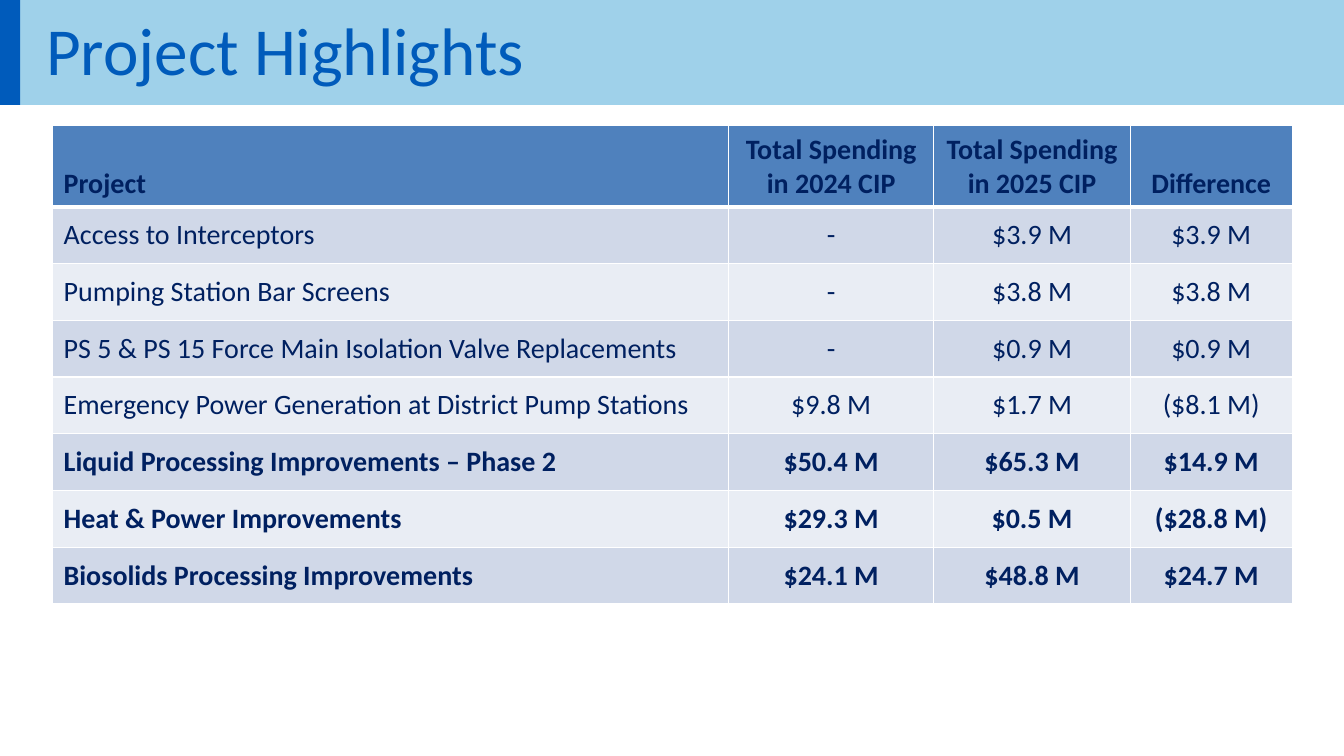
from dataclasses import dataclass

from pptx import Presentation
from pptx.dml.color import RGBColor as RGB
from pptx.enum.shapes import MSO_SHAPE as SHAPE
from pptx.enum.text import MSO_ANCHOR as ANCHOR, PP_ALIGN as ALIGN
from pptx.oxml.ns import qn
from pptx.util import Pt
from lxml.etree import SubElement


@dataclass(frozen=True)
class Theme:
    font: str = "Calibri"
    title_size: int = 48
    table_size: int = 20
    banner: str = "8FCAE7"
    accent: str = "005BBB"
    ink: str = "002060"
    header: str = "4F81BD"
    bands: tuple = ("D0D8E8", "E9EDF4")
    rule: str = "FFFFFF"


def write(tf, text, *, font, size, color, bold=False, align=ALIGN.LEFT):
    p = tf.paragraphs[0]
    p.alignment = align
    r = p.add_run()
    r.text = text
    r.font.name, r.font.size, r.font.bold = font, Pt(size), bold
    r.font.color.rgb = RGB.from_string(color)


class Deck:
    def __init__(self, slide, theme):
        self.slide, self.theme = slide, theme

    def bar(self, x, y, w, h, color, opacity=100):
        sp = self.slide.shapes.add_shape(SHAPE.RECTANGLE, Pt(x), Pt(y), Pt(w), Pt(h))
        sp.shadow.inherit = False
        sp.line.fill.background()
        sp.fill.solid()
        sp.fill.fore_color.rgb = RGB.from_string(color)
        if opacity < 100:
            clr = sp.fill._xPr.find(".//" + qn("a:srgbClr"))
            SubElement(clr, qn("a:alpha"), val=str(opacity * 1000))

    def title(self, x, y, w, h, text):
        tf = self.slide.shapes.add_textbox(Pt(x), Pt(y), Pt(w), Pt(h)).text_frame
        tf.word_wrap = True
        tf.margin_top = Pt(6)
        t = self.theme
        write(tf, text, font=t.font, size=t.title_size, color=t.accent)

    def borders(self, cell, **widths):
        tc_pr = cell._tc.get_or_add_tcPr()
        for side in "LRTB":
            ln = SubElement(tc_pr, qn("a:ln" + side), w=str(Pt(widths.get(side, 1))))
            fill = SubElement(ln, qn("a:solidFill"))
            SubElement(fill, qn("a:srgbClr"), val=self.theme.rule)

    def table(self, x, y, col_widths, row_heights, rows, bold_rows):
        t = self.theme
        frame = self.slide.shapes.add_table(
            len(rows), len(col_widths), Pt(x), Pt(y),
            Pt(sum(col_widths)), Pt(sum(row_heights)))
        tbl = frame.table
        for col, w in zip(tbl.columns, col_widths):
            col.width = Pt(w)
        for i, (row, h) in enumerate(zip(rows, row_heights)):
            tbl.rows[i].height = Pt(h)
            for j, text in enumerate(row):
                cell = tbl.cell(i, j)
                cell.margin_left = cell.margin_right = Pt(8)
                cell.margin_top = cell.margin_bottom = Pt(4)
                cell.vertical_anchor = ANCHOR.MIDDLE if i else ANCHOR.BOTTOM
                # The rule under the header is heavier
                self.borders(cell, T=3 if i == 1 else 1, B=1 if i else 3)
                cell.fill.solid()
                color = t.bands[(i - 1) % 2] if i else t.header
                cell.fill.fore_color.rgb = RGB.from_string(color)
                write(cell.text_frame, text, font=t.font, size=t.table_size,
                      color=t.ink, bold=i in bold_rows,
                      align=ALIGN.CENTER if j else ALIGN.LEFT)


PROJECTS = [
    ("Project", "Total Spending in 2024 CIP", "Total Spending in 2025 CIP", "Difference"),
    ("Access to Interceptors", "-", "$3.9 M", "$3.9 M"),
    ("Pumping Station Bar Screens", "-", "$3.8 M", "$3.8 M"),
    ("PS 5 & PS 15 Force Main Isolation Valve Replacements", "-", "$0.9 M", "$0.9 M"),
    ("Emergency Power Generation at District Pump Stations", "$9.8 M", "$1.7 M", "($8.1 M)"),
    ("Liquid Processing Improvements – Phase 2", "$50.4 M", "$65.3 M", "$14.9 M"),
    ("Heat & Power Improvements", "$29.3 M", "$0.5 M", "($28.8 M)"),
    ("Biosolids Processing Improvements", "$24.1 M", "$48.8 M", "$24.7 M"),
]


def main():
    prs = Presentation()
    prs.slide_width, prs.slide_height = Pt(960), Pt(540)
    theme = Theme()
    deck = Deck(prs.slides.add_slide(prs.slide_layouts[6]), theme)

    # Title banner
    deck.bar(0, 0, 960, 75, theme.banner, opacity=85)
    deck.bar(0, 0, 14.5, 75, theme.accent)
    deck.title(26, 0, 688, 87, "Project Highlights")

    # Spending table
    heights = [58.2] + [40.55] * (len(PROJECTS) - 1)
    deck.table(37.5, 89.5, (483, 146.5, 140.5, 115.5), heights, PROJECTS,
               bold_rows={0, 5, 6, 7})

    prs.save("out.pptx")


if __name__ == "__main__":
    main()
